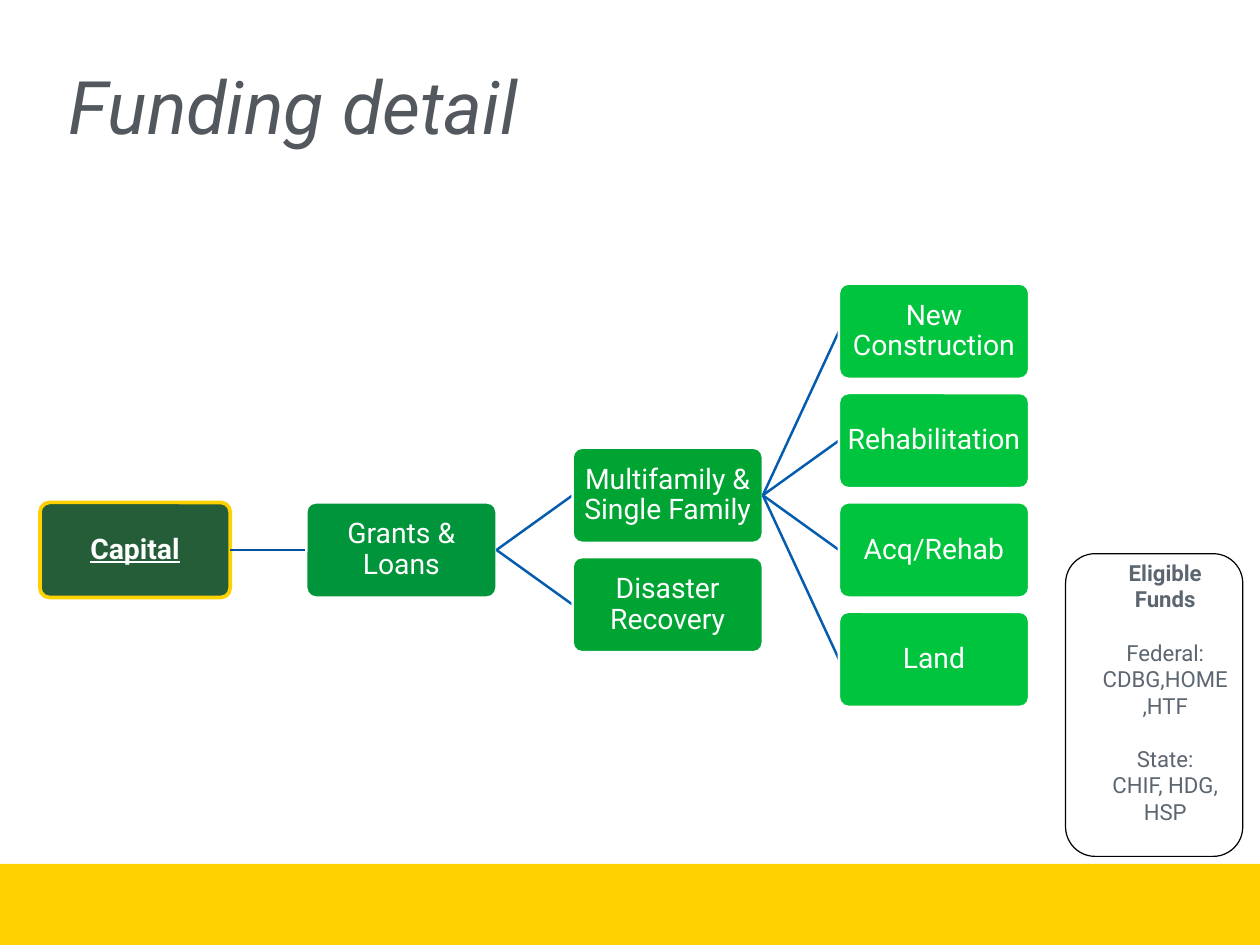
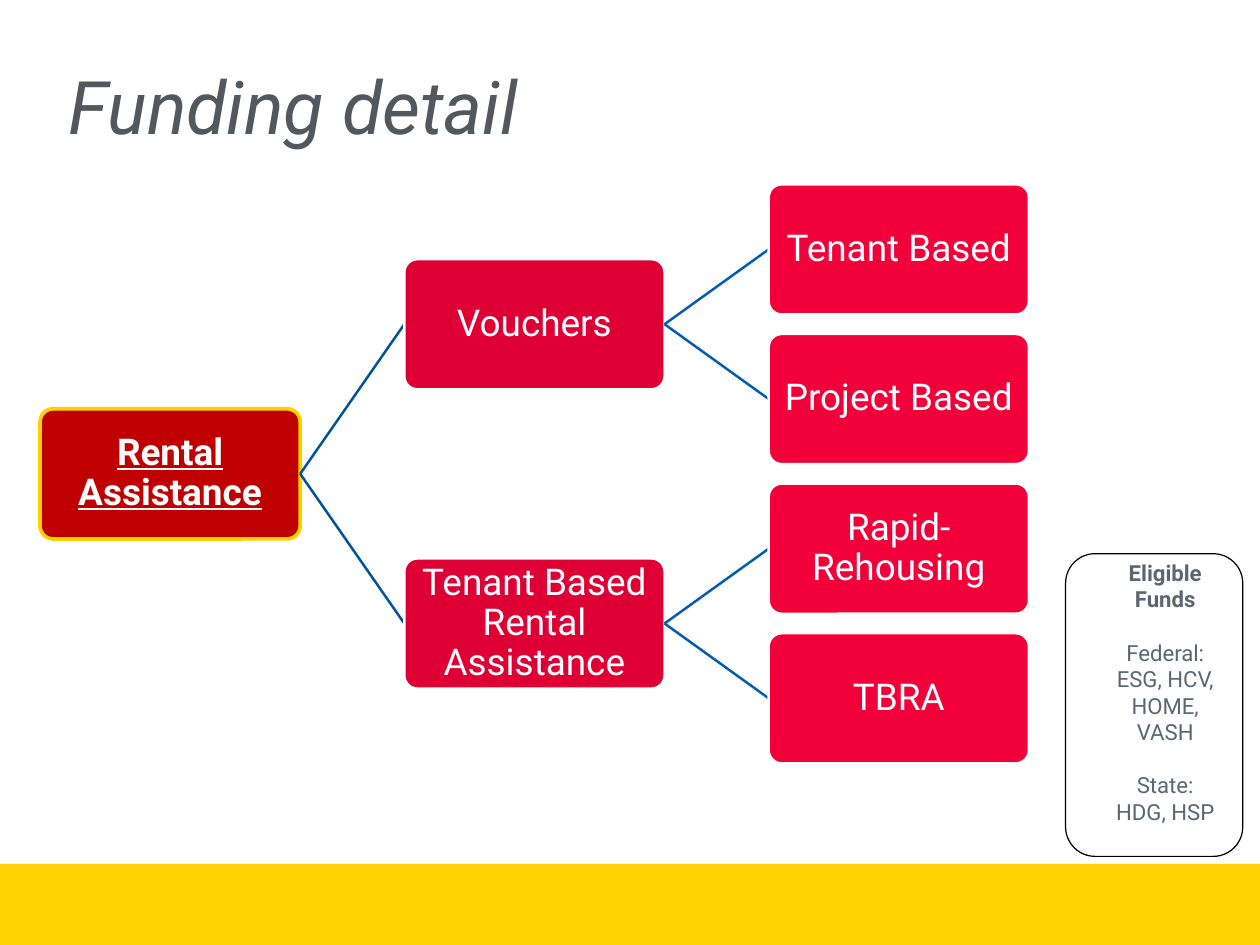
"""Builds two funding trees with their lists of eligible funds."""
from dataclasses import dataclass

from lxml import etree
from pptx import Presentation
from pptx import util as u
from pptx.dml import color
from pptx.enum import shapes as es
from pptx.enum import text as et
from pptx.oxml import ns

FONT = "Roboto"
GOLD, WHITE, BLACK = "FFD100", "FFFFFF", "000000"
SLATE, GREY = "53585F", "5C6670"
ROOT_LINK, LINK = "02519A", "035CAE"
WIDE, HIGH = 1024, 768
BAND_TOP = 702
LEFT = 32.5


@dataclass
class Node:
    """A box in a column and row, hung from the parent with that index."""
    text: str
    col: int
    row: float
    parent: int | None = None


@dataclass
class Tree:
    """A tree with its box width, first row, text size and column fills."""
    width: float
    top: float
    size: float
    fills: list[str]
    nodes: list[Node]
    federal: str
    state: str


TREES = [
    Tree(154.6, 230.5, 23, ["245D38", "00953A", "00A433", "00C43D"], [
        Node("Capital", 0, 2),
        Node("Grants & Loans", 1, 2, 0),
        Node("Multifamily & Single Family", 2, 1.5, 1),
        Node("New Construction", 3, 0, 2),
        Node("Rehabilitation", 3, 1, 2),
        Node("Acq/Rehab", 3, 2, 2),
        Node("Land", 3, 3, 2),
        Node("Disaster Recovery", 2, 2.5, 1),
    ], "CDBG,HOME,HTF", "CHIF, HDG, HSP"),
    Tree(211.5, 149.8, 30, ["C00000", "DE0035", "F2003A"], [
        Node("Rental Assistance", 0, 1.5),
        Node("Vouchers", 1, 0.5, 0),
        Node("Tenant Based", 2, 0, 1),
        Node("Project Based", 2, 1, 1),
        Node("Tenant Based Rental Assistance", 1, 2.5, 0),
        Node("Rapid-Rehousing", 2, 2, 4),
        Node("TBRA", 2, 3, 4),
    ], "ESG, HCV, HOME, VASH", "HDG, HSP"),
]


def rgb(code: str) -> color.RGBColor:
    """Turns a hex string into a colour."""
    return color.RGBColor.from_string(code)


def style(para, size: float, code: str, bold: bool = False) -> None:
    """Formats the runs of a paragraph."""
    for run in para.runs:
        font = run.font
        font.name, font.size, font.bold = FONT, u.Pt(size), bold
        font.color.rgb = rgb(code)


def inset(frame, left: float, top: float, right: float, low: float) -> None:
    """Sets the margins of a text frame and lets it wrap."""
    frame.word_wrap = True
    frame.margin_left, frame.margin_top = u.Pt(left), u.Pt(top)
    frame.margin_right, frame.margin_bottom = u.Pt(right), u.Pt(low)


def add_box(slide, kind, place: tuple, fill: str | None,
            line: str | None = None, weight: float = 1):
    """Adds a preset shape, filled or outlined as asked."""
    box = slide.shapes.add_shape(kind, *(u.Pt(n) for n in place))
    box.shadow.inherit = False
    if fill:
        box.fill.solid()
        box.fill.fore_color.rgb = rgb(fill)
    else:
        box.fill.background()
    if line:
        box.line.color.rgb = rgb(line)
        box.line.width = u.Pt(weight)
    else:
        box.line.fill.background()
    return box


def set_base(layout, slide) -> None:
    """Gives the layout its gold band and title place."""
    band = add_box(slide, es.MSO_SHAPE.RECTANGLE,
                   (0, BAND_TOP, WIDE, HIGH - BAND_TOP), GOLD)
    band.element.nvSpPr.cNvPr.id = 99
    layout.shapes.element.insert(2, band.element)
    title = layout.placeholders[0]
    title.left, title.top = u.Pt(50), u.Pt(42)
    title.width, title.height = u.Pt(864), u.Pt(98)


def set_title(slide, words: str) -> None:
    """Fills the title placeholder."""
    frame = slide.shapes.title.text_frame
    frame.text = words
    frame.vertical_anchor = et.MSO_ANCHOR.TOP
    frame.auto_size = et.MSO_AUTO_SIZE.NONE
    inset(frame, 6, 7, 6, 7)
    para = frame.paragraphs[0]
    para.alignment = et.PP_ALIGN.LEFT
    style(para, 60, SLATE)
    para.runs[0].font.italic = True


def add_link(slide, start, end, code: str) -> None:
    """Joins two boxes with a line that lies behind the second."""
    link = slide.shapes.add_connector(es.MSO_CONNECTOR.STRAIGHT, 0, 0, 0, 0)
    link.begin_connect(start, 3)
    link.end_connect(end, 1)
    link.line.color.rgb = rgb(code)
    link.line.width = u.Pt(2)
    etree.SubElement(link.element.spPr, ns.qn("a:effectLst"))
    end.element.addprevious(link.element)


def add_node(slide, tree: Tree, node: Node):
    """Adds one box of the tree."""
    wide, high = tree.width, tree.width / 2
    root = node.parent is None
    place = (LEFT + node.col * wide * 1.4,
             tree.top + node.row * high * 1.15, wide, high)
    box = add_box(slide, es.MSO_SHAPE.ROUNDED_RECTANGLE, place,
                  tree.fills[node.col], GOLD if root else WHITE,
                  3 if root else 2)
    box.adjustments[0] = 0.1
    frame = box.text_frame
    frame.text = node.text
    frame.vertical_anchor = et.MSO_ANCHOR.MIDDLE
    inset(frame, 1.5, 1.5, 1.5, 1.5)
    para = frame.paragraphs[0]
    para.alignment = et.PP_ALIGN.CENTER
    para.line_spacing = 0.9
    style(para, tree.size, WHITE, root)
    para.runs[0].font.underline = root
    return box


def add_tree(slide, tree: Tree) -> None:
    """Draws the boxes and the links between them."""
    boxes = []
    for node in tree.nodes:
        box = add_node(slide, tree, node)
        boxes.append(box)
        if node.parent is not None:
            add_link(slide, boxes[node.parent], box,
                     LINK if node.parent else ROOT_LINK)


def add_funds(slide, tree: Tree) -> None:
    """Adds the list of eligible funds."""
    box = add_box(slide, es.MSO_SHAPE.ROUNDED_RECTANGLE,
                  (866, 450, 144, 246), None, BLACK)
    frame = box.text_frame
    frame.text = "\n".join(["Eligible Funds", "Federal:", tree.federal,
                            "State:", tree.state])
    frame.vertical_anchor = et.MSO_ANCHOR.MIDDLE
    inset(frame, 4.5, 0, 4.5, 21)
    for rank, para in enumerate(frame.paragraphs):
        para.alignment = et.PP_ALIGN.CENTER
        para._p.get_or_add_pPr().set("marL", str(u.Pt(18)))
        if rank % 2:
            para.space_before = u.Pt(21.6)
        style(para, 18, GREY, rank == 0)


def main() -> None:
    """Builds and saves the deck."""
    deck = Presentation()
    deck.slide_width, deck.slide_height = u.Pt(WIDE), u.Pt(HIGH)
    layout = deck.slide_layouts[5]
    for rank, tree in enumerate(TREES):
        slide = deck.slides.add_slide(layout)
        if rank == 0:
            set_base(layout, slide)
        set_title(slide, "Funding detail")
        add_tree(slide, tree)
        add_funds(slide, tree)
    deck.save("out.pptx")


if __name__ == "__main__":
    main()
